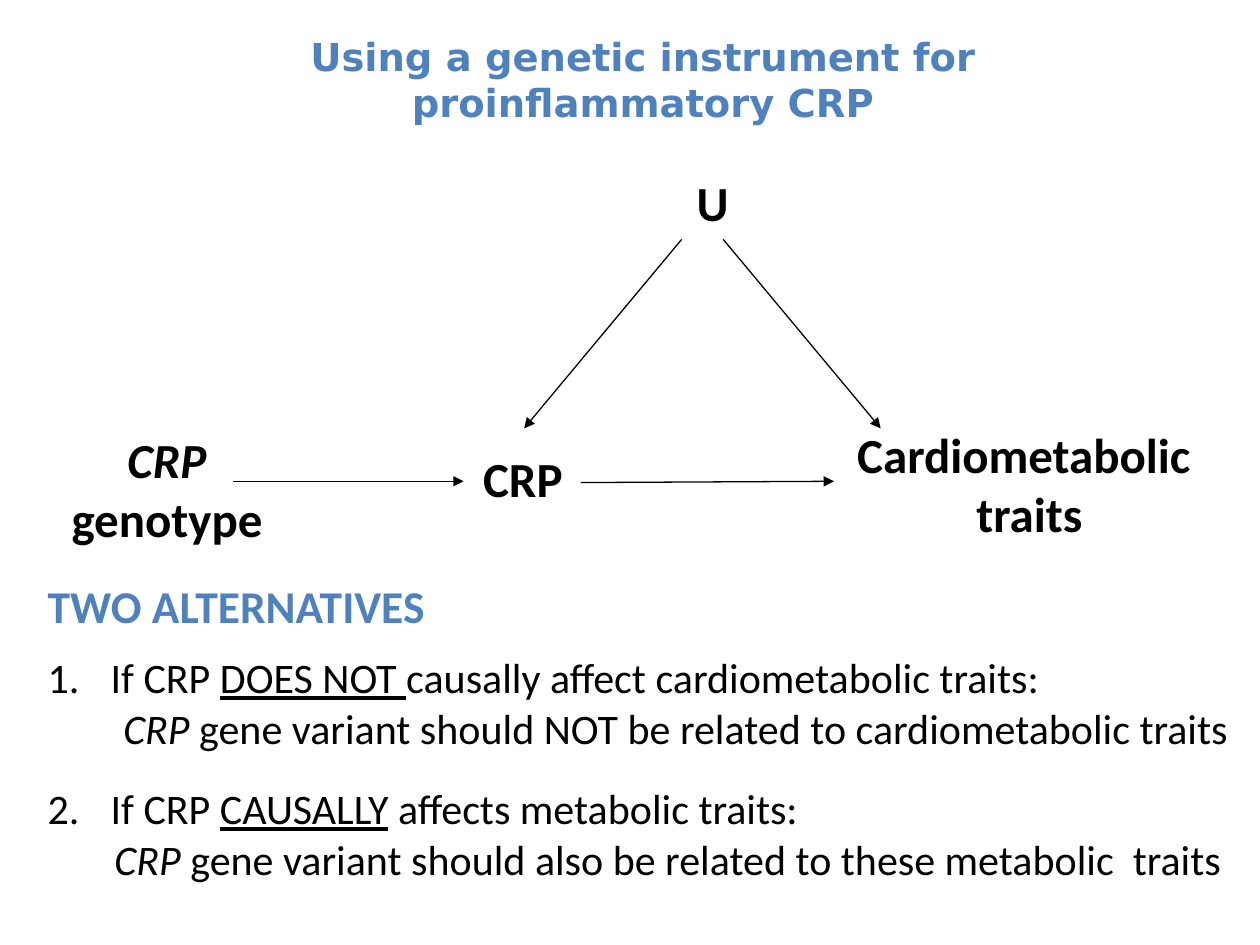
import pptx
import pptx.util
import pptx.dml.color
import pptx.enum.shapes
import pptx.enum.text
import pptx.oxml.ns
import lxml.etree
from dataclasses import dataclass

Inches = pptx.util.Inches
Pt = pptx.util.Pt
qn = pptx.oxml.ns.qn


@dataclass(frozen=True)
class Theme:
    accent: str = "4F81BD"
    ink: str = "000000"
    title_font: str = "DejaVu Sans"
    body_font: str = "Calibri"
    title: int = 22
    node: int = 28
    heading: int = 26
    body: int = 24
    line: float = 0.75


T = Theme()


def add_text(p, text, font=T.body_font, size=T.body, color=T.ink,
             bold=False, italic=False, underline=False):
    r = p.add_run()
    r.text = text
    f = r.font
    f.name, f.size = font, Pt(size)
    f.bold, f.italic, f.underline = bold, italic, underline
    f.color.rgb = pptx.dml.color.RGBColor.from_string(color)


def add_box(x, y, w, h):
    tf = s.shapes.add_textbox(Inches(x), Inches(y), Inches(w), Inches(h)).text_frame
    tf.word_wrap = True
    return tf


prs = pptx.Presentation()
prs.slide_width, prs.slide_height = Inches(10), Inches(7.5)
s = prs.slides.add_slide(prs.slide_layouts[6])

# Centred labels: title and diagram nodes, each a list of paragraphs of (text, italic)
title = dict(font=T.title_font, size=T.title, color=T.accent)
node = dict(size=T.node)
labels = [
    (0.59, 0.21, 9.13, 1.14, title, [[("Using a genetic instrument for ", False)],
                                     [("proinflammatory CRP ", False)]]),
    (4.74, 1.32, 1.83, 0.57, node, [[("U", False)]]),
    (6.69, 3.32, 2.96, 1.04, node, [[("Cardiometabolic ", False)], [("traits", False)]]),
    (0.28, 3.36, 2.09, 1.04, node, [[("CRP ", True), ("genotype", False)]]),
    (2.95, 3.51, 2.4, 0.57, node, [[("CRP", False)]]),
]
for x, y, w, h, style, paragraphs in labels:
    tf = add_box(x, y, w, h)
    for i, runs in enumerate(paragraphs):
        p = tf.add_paragraph() if i else tf.paragraphs[0]
        p.alignment = pptx.enum.text.PP_ALIGN.CENTER
        for text, italic in runs:
            add_text(p, text, bold=True, italic=italic, **style)

# Causal arrows
arrows = [
    (5.41, 1.9, 4.16, 3.4),
    (5.74, 1.9, 6.99, 3.4),
    (1.85, 3.82, 3.68, 3.82),
    (4.61, 3.83, 6.62, 3.82),
]
for ends in arrows:
    sp = s.shapes.add_connector(pptx.enum.shapes.MSO_CONNECTOR.STRAIGHT,
                                *[Inches(v) for v in ends])
    sp.line.color.rgb = pptx.dml.color.RGBColor.from_string(T.ink)
    sp.line.width = Pt(T.line)
    lxml.etree.SubElement(sp.line._get_or_add_ln(), qn("a:tailEnd"), type="triangle")
    lxml.etree.SubElement(sp._element.spPr, qn("a:effectLst"))

# Two alternatives: heading, then numbered items with an indented consequence
tf = add_box(0.28, 4.54, 9.69, 2.88)
p = tf.paragraphs[0]
p.space_after = Pt(6)
add_text(p, "TWO ALTERNATIVES", size=T.heading, color=T.accent, bold=True)

alternatives = [
    (4.8, "DOES NOT ", "causally affect cardiometabolic traits:",
     0.6, " gene variant should NOT be related to cardiometabolic traits"),
    (17.3, "CAUSALLY", " affects metabolic traits:",
     0.53, " gene variant should also be related to these metabolic  traits"),
]
for number, (gap, stressed, rest, indent, consequence) in enumerate(alternatives, 1):
    p = tf.add_paragraph()
    p.space_before = Pt(gap)
    pPr = p._p.get_or_add_pPr()
    pPr.set("marL", str(Inches(0.5)))
    pPr.set("indent", str(Inches(-0.5)))
    lxml.etree.SubElement(pPr, qn("a:buFont"), typeface=T.body_font)
    lxml.etree.SubElement(pPr, qn("a:buAutoNum"), type="arabicPeriod", startAt=str(number))
    add_text(p, "If CRP ")
    add_text(p, stressed, underline=True)
    add_text(p, rest)

    p = tf.add_paragraph()
    p._p.get_or_add_pPr().set("marL", str(Inches(indent)))
    add_text(p, "CRP", italic=True)
    add_text(p, consequence)

prs.save("out.pptx")
